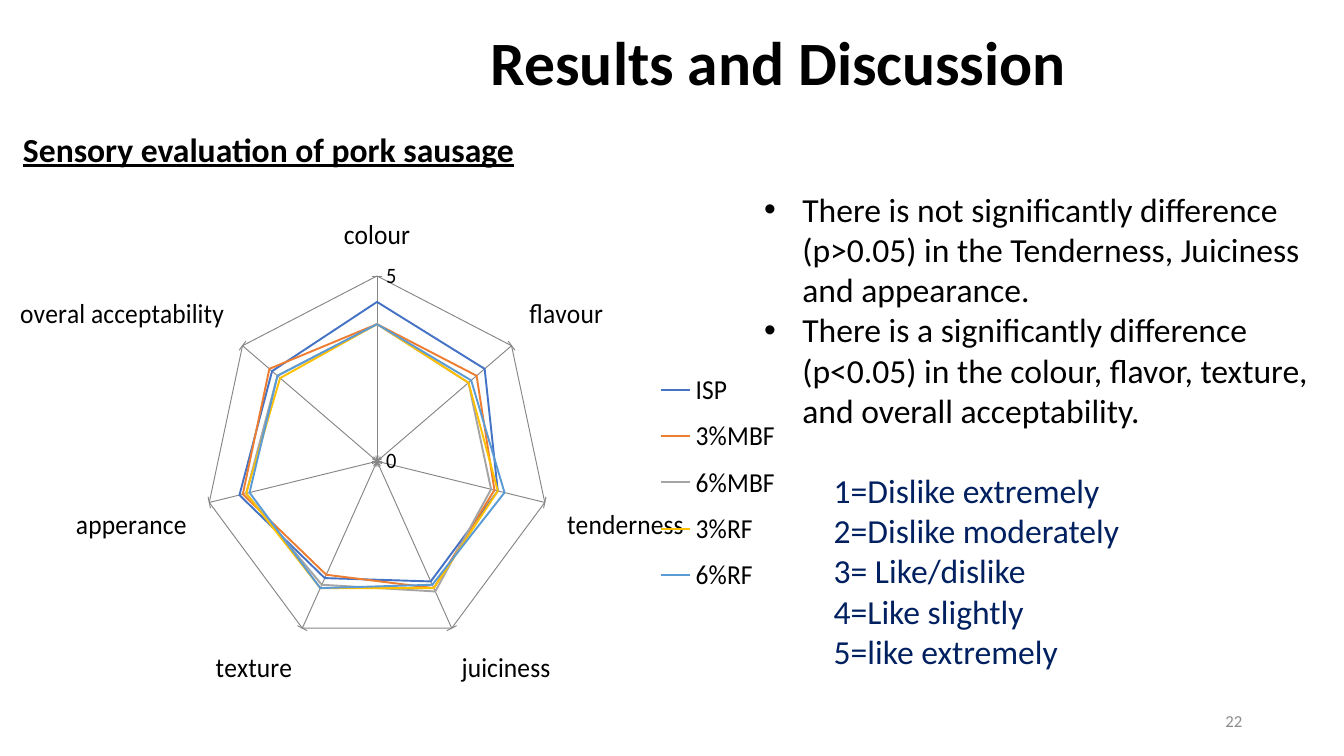
from dataclasses import dataclass

from lxml.etree import SubElement
from pptx import Presentation
from pptx.chart.data import CategoryChartData
from pptx.dml.color import RGBColor
from pptx.enum.chart import XL_CHART_TYPE as ChartType
from pptx.enum.chart import XL_LEGEND_POSITION as LegendPosition
from pptx.enum.chart import XL_TICK_MARK as TickMark
from pptx.enum.text import MSO_ANCHOR as Anchor
from pptx.enum.text import PP_ALIGN as Align
from pptx.oxml.ns import qn
from pptx.util import Inches, Pt


@dataclass(frozen=True)
class Theme:
    font: str = "Calibri"
    text: str = "000000"
    scale: str = "002060"
    number: str = "8C8C8C"
    grid: str = "868686"
    title_size: int = 44
    body_size: int = 24
    label_size: int = 20
    value_size: int = 16
    number_size: int = 12


THEME = Theme()

ATTRIBUTES = ["colour", "flavour", "tenderness", "juiciness", "texture",
              "apperance", "overal acceptability"]
SAUSAGES = [
    ("ISP", "4472C4", [4.3, 4, 3.6, 3.6, 3.5, 4.1, 3.9]),
    ("3%MBF", "ED7D31", [3.7, 3.7, 3.5, 3.8, 3.4, 4, 4]),
    ("6%MBF", "A5A5A5", [3.7, 3.4, 3.4, 3.9, 3.7, 3.9, 3.7]),
    ("3%RF", "FFC000", [3.7, 3.4, 3.6, 3.8, 3.8, 3.9, 3.6]),
    ("6%RF", "5B9BD5", [3.7, 3.5, 3.8, 3.7, 3.8, 3.8, 3.7]),
]
FINDINGS = [
    "There is not significantly difference (p>0.05) in the Tenderness, "
    "Juiciness and appearance.",
    "There is a significantly difference (p<0.05) in the colour, flavor, "
    "texture, and overall acceptability.",
]
SCALE = ["1=Dislike extremely", "2=Dislike moderately", "3= Like/dislike",
         "4=Like slightly", "5=like extremely"]


def style_font(font, size, color=THEME.text, bold=False, underline=False):
    font.name = THEME.font
    font.size = Pt(size)
    font.bold = bold
    font.underline = underline
    font.color.rgb = RGBColor.from_string(color)


def add_bullet(paragraph):
    properties = paragraph._p.get_or_add_pPr()
    properties.set("marL", str(Inches(0.38)))
    properties.set("indent", str(Inches(-0.38)))
    SubElement(properties, qn("a:buFont")).set("typeface", "Arial")
    SubElement(properties, qn("a:buChar")).set("char", "•")


def add_text(slide, box, lines, size, color=THEME.text, align=Align.LEFT,
             anchor=Anchor.TOP, spacing=1.0, bullets=False, **emphasis):
    shape = slide.shapes.add_textbox(*map(Inches, box))
    frame = shape.text_frame
    frame.word_wrap = True
    frame.vertical_anchor = anchor
    for index, line in enumerate(lines):
        paragraph = frame.add_paragraph() if index else frame.paragraphs[0]
        paragraph.alignment = align
        paragraph.line_spacing = spacing
        if bullets:
            add_bullet(paragraph)
        run = paragraph.add_run()
        run.text = line
        style_font(run.font, size, color, **emphasis)


def place(element, x, y, width, height, inner=False):
    """Fix a chart part at fractions of the chart area."""
    layout = element.find(qn("c:layout"))
    if layout is None:
        layout = SubElement(element, qn("c:layout"))
        first = element.find(qn("c:legendPos"))
        if first is None:
            element.insert(0, layout)
        else:
            first.addnext(layout)
    for child in list(layout):
        layout.remove(child)
    manual = SubElement(layout, qn("c:manualLayout"))
    settings = [("layoutTarget", "inner")] if inner else []
    settings += [("xMode", "edge"), ("yMode", "edge"),
                 ("x", x), ("y", y), ("w", width), ("h", height)]
    for name, value in settings:
        SubElement(manual, qn(f"c:{name}")).set("val", str(value))


def style_axis(axis, size, tick):
    axis.has_major_gridlines = True
    for line in (axis.format.line, axis.major_gridlines.format.line):
        line.color.rgb = RGBColor.from_string(THEME.grid)
        line.width = Pt(0.75)
    axis.major_tick_mark = tick
    axis.minor_tick_mark = TickMark.NONE
    style_font(axis.tick_labels.font, size)


def add_sensory_chart(slide, box):
    data = CategoryChartData(number_format="General")
    data.categories = ATTRIBUTES
    for name, _, scores in SAUSAGES:
        data.add_series(name, scores)
    chart = slide.shapes.add_chart(
        ChartType.RADAR, *map(Inches, box), data).chart
    chart.has_title = False
    style_font(chart.font, THEME.label_size)
    chart.plots[0].vary_by_categories = False
    for series, (_, color, _) in zip(chart.plots[0].series, SAUSAGES):
        series.smooth = False
        series.format.line.color.rgb = RGBColor.from_string(color)
        series.format.line.width = Pt(1.5)

    style_axis(chart.category_axis, THEME.label_size, TickMark.OUTSIDE)
    style_axis(chart.value_axis, THEME.value_size, TickMark.CROSS)
    chart.value_axis.minimum_scale = 0
    chart.value_axis.maximum_scale = 5
    chart.value_axis.major_unit = 5

    chart.has_legend = True
    chart.legend.position = LegendPosition.RIGHT
    chart.legend.include_in_layout = False
    style_font(chart.legend.font, THEME.label_size)
    place(chart.legend._element, 0.83, 0.33, 0.17, 0.52)
    plot_area = chart._chartSpace.chart.plotArea
    place(plot_area, 0.16, 0.15, 0.5, 0.79, inner=True)


def main():
    presentation = Presentation()
    presentation.slide_width = Inches(13.33)
    presentation.slide_height = Inches(7.5)
    slide = presentation.slides.add_slide(presentation.slide_layouts[6])

    add_text(slide, (2.23, 0.15, 10.99, 0.99), ["Results and Discussion"],
             THEME.title_size, align=Align.CENTER, anchor=Anchor.MIDDLE,
             spacing=0.9, bold=True)
    add_text(slide, (0.13, 1.23, 13.07, 5.83),
             ["Sensory evaluation of pork sausage"], THEME.body_size,
             bold=True, underline=True)
    add_text(slide, (9.42, 6.95, 3, 0.4), ["22"], THEME.number_size,
             THEME.number, Align.RIGHT, Anchor.MIDDLE)
    add_sensory_chart(slide, (0.2, 2.04, 7.64, 4.75))
    add_text(slide, (7.48, 1.82, 5.7, 2.52), FINDINGS, THEME.body_size,
             bullets=True)
    add_text(slide, (8.17, 4.61, 3.92, 2.12), SCALE, THEME.body_size,
             THEME.scale)

    presentation.save("out.pptx")


if __name__ == "__main__":
    main()
